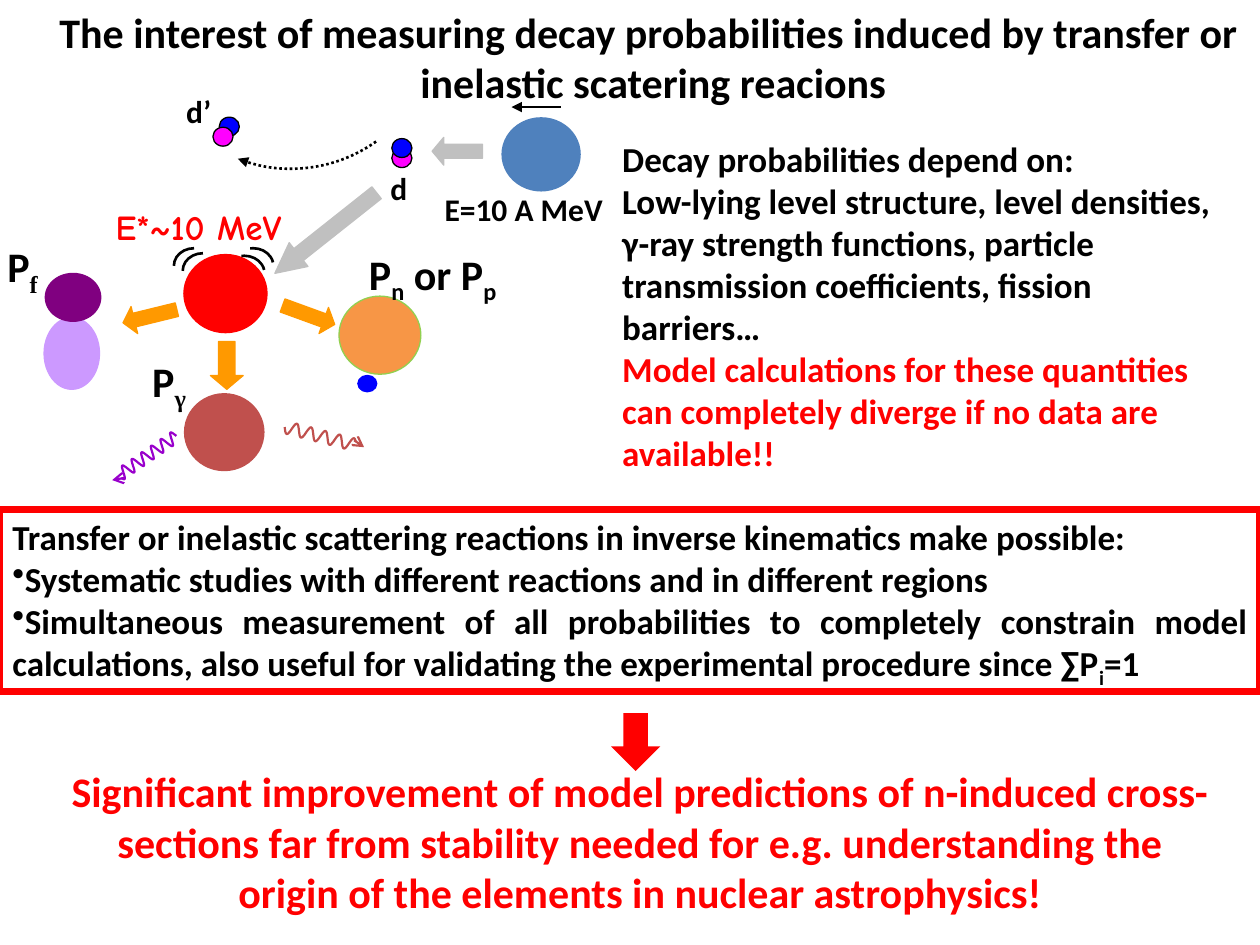
from math import hypot, pi, sin

from lxml.etree import SubElement
from pptx import Presentation
from pptx.dml.color import RGBColor
from pptx.enum.dml import MSO_LINE
from pptx.enum.shapes import MSO_CONNECTOR as Connector, MSO_SHAPE as Shape
from pptx.enum.text import MSO_ANCHOR as Anchor, MSO_AUTO_SIZE as AutoSize, PP_ALIGN as Align
from pptx.oxml.ns import qn
from pptx.util import Inches, Pt

COLUMNS, ROWS = 100, 75
BLACK, RED, BLUE, PINK = "000000", "FF0000", "0000FF", "FF00FF"
ORANGE, GREY = "FF9900", "C0C0C0"


def colour(code):
    return RGBColor.from_string(code)


class Sketch:
    """Style and current slide; lengths are columns and rows of a 100 x 75 grid."""

    font = "Calibri"

    def __init__(self, deck, page):
        self.page = page
        self.column = deck.slide_width / COLUMNS
        self.row = deck.slide_height / ROWS

    def place(self, left, top, width, height):
        return (round(left * self.column), round(top * self.row),
                round(width * self.column), round(height * self.row))

    def add_paras(self, box, paras, size, ink=BLACK, align=Align.LEFT, font=None):
        """Each para is a list of spans: (text, {"ink", "font", "sub"})."""
        frame = box.text_frame
        frame.word_wrap = True
        frame.auto_size = AutoSize.NONE
        frame.vertical_anchor = Anchor.TOP
        for index, spans in enumerate(paras):
            para = frame.add_paragraph() if index else frame.paragraphs[0]
            para.alignment = align
            if spans[0][0] == "•":
                bullet = SubElement(para._p.get_or_add_pPr(), qn("a:buChar"))
                bullet.set("char", "•")
                spans = spans[1:]
            for text, look in spans:
                span = para.add_run()
                span.text = text
                span.font.name = look.get("font", font or self.font)
                span.font.size = Pt(size)
                span.font.bold = True
                span.font.color.rgb = colour(look.get("ink", ink))
                if look.get("sub"):
                    span._r.get_or_add_rPr().set("baseline", "-25000")

    def title(self, area, paras, size):
        box = self.page.shapes.title
        box.left, box.top, box.width, box.height = self.place(*area)
        self.add_paras(box, paras, size, align=Align.CENTER)

    def text(self, area, paras, size, **look):
        self.add_paras(self.page.shapes.add_textbox(*self.place(*area)), paras, size, **look)

    def stroke(self, shape, ink, width, arrow=None):
        shape.line.color.rgb = colour(ink)
        shape.line.width = Pt(width)
        if arrow:
            SubElement(shape.line._get_or_add_ln(), qn("a:tailEnd")).set("type", arrow)

    def shape(self, kind, area, fill=None, line=None, width=0.75, turn=0, adjust=()):
        shape = self.page.shapes.add_shape(kind, *self.place(*area))
        shape.shadow.inherit = False
        shape.rotation = turn
        for index, value in enumerate(adjust):
            shape.adjustments[index] = value
        if fill:
            shape.fill.solid()
            shape.fill.fore_color.rgb = colour(fill)
        else:
            shape.fill.background()
        if line:
            self.stroke(shape, line, width)
        else:
            shape.line.fill.background()
        return shape

    def arc(self, centre, radii, start, stop):
        (x, y), (wide, high) = centre, radii
        area = (x - wide, y - high, 2 * wide, 2 * high)
        # Arc angles are stored in 60000ths of a degree, adjustments in 100000ths
        return self.shape(Shape.ARC, area, line=BLACK, width=1.5,
                          adjust=(start * 0.6, stop * 0.6))

    def arrow(self, start, end, ink):
        ends = self.place(*start, *end)
        line = self.page.shapes.add_connector(Connector.STRAIGHT, *ends)
        SubElement(line._element.spPr, qn("a:effectLst"))
        self.stroke(line, ink, 0.75, "triangle")

    def wave(self, start, end, cycles, height, ink):
        """Sine ray from start to end with a straight last stretch."""
        across, down = end[0] - start[0], end[1] - start[1]
        length = hypot(across, down)
        steps = cycles * 16
        points = []
        for step in range(steps + 1):
            share = 0.9 * step / steps
            lift = height * sin(2 * pi * cycles * step / steps)
            points.append(((start[0] + share * across - lift * down / length) * self.column,
                           (start[1] + share * down + lift * across / length) * self.row))
        points.append((end[0] * self.column, end[1] * self.row))
        builder = self.page.shapes.build_freeform(*points[0], scale=1.0)
        builder.add_line_segments(points[1:], close=False)
        ray = builder.convert_to_shape()
        ray.shadow.inherit = False
        ray.fill.background()
        self.stroke(ray, ink, 1.25, "arrow")


def plain(text, **look):
    return [(text, look)]


def probability(sub, **look):
    return [("P", {}), (sub, {"sub": True, **look})]


def main():
    deck = Presentation()
    deck.slide_width, deck.slide_height = Inches(10), Inches(7.5)
    page = deck.slides.add_slide(deck.slide_layouts[5])
    sketch = Sketch(deck, page)

    # Title
    sketch.title((-2.8, 0, 109.3, 9.1), [
        plain("The interest of measuring decay probabilities induced by transfer or "),
        plain("inelastic scatering reacions")], 24)

    # Framed list of advantages
    frame = sketch.shape(Shape.RECTANGLE, (0, 40.4, 100, 14.5), line=RED, width=4)
    sketch.add_paras(frame, [
        plain("Transfer or inelastic scattering reactions in inverse kinematics make possible:"),
        plain("•") + plain("Systematic studies with different reactions and in different regions"),
        plain("•") + plain("Simultaneous measurement of all probabilities to completely constrain "
                           "model calculations, also useful for validating the experimental "
                           "procedure since ∑P") + plain("i", sub=True) + plain("=1"),
    ], 20, align=Align.JUSTIFY)

    # Nuclei: area, fill, outline
    nuclei = [
        ((3.5, 25.2, 4.4, 5.7), "CC99FF", "CC99FF"),
        ((3.6, 21.7, 4.4, 3.8), "800080", "800080"),
        ((14.6, 20.2, 6.6, 6.2), RED, RED),
        ((28.4, 29.8, 1.5, 1.3), BLUE, BLUE),
        ((26.9, 23.5, 6.5, 6.2), "F79646", "92D050"),
        ((14.6, 31.2, 6.4, 6.2), "C0504D", None),
        ((39.8, 9.3, 6.3, 5.9), "4F81BD", None),
    ]
    for area, fill, line in nuclei:
        sketch.shape(Shape.OVAL, area, fill, line)

    # Nucleons of the deuterons
    for left, top, fill in [(17.4, 9.3, BLUE), (16.9, 10.1, PINK),
                            (31.1, 11.8, PINK), (31.1, 11, BLUE)]:
        sketch.shape(Shape.OVAL, (left, top, 1.6, 1.5), fill, BLACK)

    # Vibration marks around the excited nucleus
    for centre, start, stop in [((15.4, 21.1), 180, 270), ((16.1, 21.5), 180, 270),
                                ((20.1, 21.1), 260, 350), ((19.4, 21.7), 260, 350)]:
        sketch.arc(centre, (1.6, 1.4), start, stop)

    # Block arrows: kind, area, fill, turn, adjustments
    blocks = [
        (Shape.RIGHT_ARROW, (9.7, 24, 4.4, 2.2), ORANGE, 166.2, (0.5, 0.42)),
        (Shape.RIGHT_ARROW, (16.1, 27.7, 3.8, 2.6), ORANGE, 90, (0.5, 0.42)),
        (Shape.RIGHT_ARROW, (22.3, 23.9, 4.4, 2.2), ORANGE, 20, (0.5, 0.42)),
        (Shape.RIGHT_ARROW, (20.7, 17.3, 10.3, 2.4), GREY, 141.6, (0.5, 1)),
        (Shape.LEFT_ARROW, (34.3, 10.9, 4, 2.2), GREY, 0, (0.5, 0.42)),
    ]
    for kind, area, fill, turn, adjust in blocks:
        sketch.shape(kind, area, fill, fill, turn=turn, adjust=adjust)
    sketch.shape(Shape.DOWN_ARROW, (48.5, 56.6, 3.9, 4.6), RED)

    # Gamma rays, beam direction and scattered path
    sketch.wave((22.6, 33.9), (28.9, 35.5), 5, 0.5, "C0504D")
    sketch.wave((14, 34.6), (8.9, 38.1), 6, 0.5, "9900CC")
    sketch.arrow((44.5, 8.5), (40.6, 8.5), BLACK)
    track = sketch.arc((23.1, 1.6), (11.7, 11.8), 55, 111)
    track.line.dash_style = MSO_LINE.ROUND_DOT
    sketch.stroke(track, BLACK, 1.5, "triangle")

    # Diagram labels
    sketch.text((8.2, 15.8, 25.3, 4.4), [plain("E*~10 MeV")], 20, ink=RED, font="Comic Neue")
    sketch.text((28.3, 19.2, 18.7, 9.1),
                [probability("n") + plain(" or ") + probability("p")], 24)
    for left, top, sub in [(11.1, 27.7, "γ"), (-0.4, 18.6, "f")]:
        sketch.text((left, top, 8.3, 9.1), [probability(sub, font="Times New Roman")], 24)
    for left, top, width, label in [(34.3, 14.6, 17.6, "E=10 A MeV"),
                                    (13.8, 6.8, 4.7, "d’"), (30, 12.9, 4.6, "d")]:
        sketch.text((left, top, width, 4), [plain(label)], 18)

    # Explanation and conclusion
    sketch.text((48.4, 10.4, 50.4, 27.9), [
        plain("Decay probabilities depend on:"),
        plain("Low-lying level structure, level densities, γ-ray strength functions, "
              "particle transmission coefficients, fission barriers…"),
        plain("Model calculations for these quantities can completely diverge "
              "if no data are available!!", ink=RED)], 20)
    sketch.text((4.3, 60.3, 93, 13.1), [
        plain("Significant improvement of model predictions of n-induced cross-sections far "
              "from stability needed for e.g. understanding the origin of the elements in "
              "nuclear astrophysics!")], 24, ink=RED, align=Align.CENTER)

    deck.save("out.pptx")


if __name__ == "__main__":
    main()
